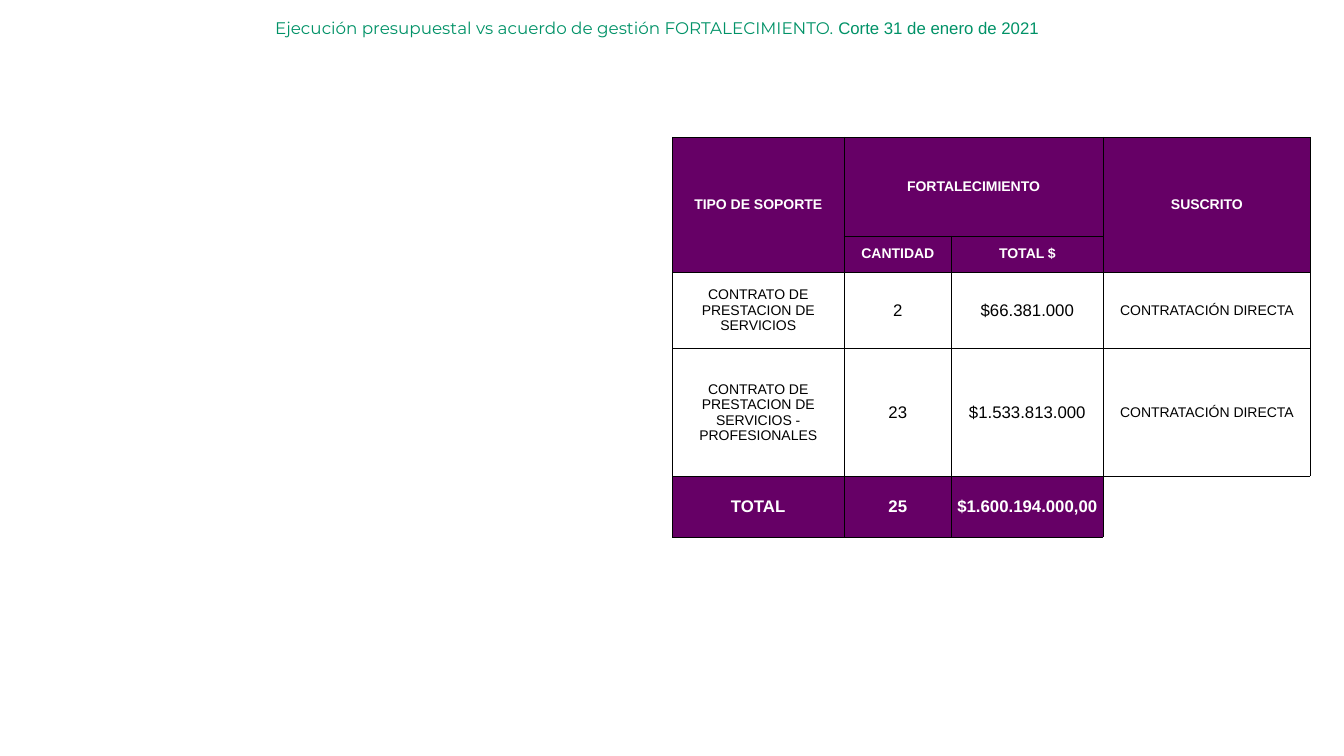
from dataclasses import dataclass

from lxml.etree import SubElement
from pptx import Presentation
from pptx.dml.color import RGBColor
from pptx.enum.text import MSO_ANCHOR, MSO_AUTO_SIZE, PP_ALIGN
from pptx.oxml.ns import qn
from pptx.util import Inches, Pt


@dataclass(frozen=True)
class Theme:
    """Colours, fonts and type sizes of the slide."""
    green: str = "009267"
    purple: str = "660066"
    white: str = "FFFFFF"
    black: str = "000000"
    title_font: str = "Montserrat"
    body_font: str = "Arial"
    large: int = 12
    small: int = 10
    border: float = 0.5


COLUMN_WIDTHS = [1.7, 1.07, 1.5, 2.06]
ROW_HEIGHTS = [0.98, 0.36, 0.76, 1.27, 0.6]
HEADER_ROWS = 2
TOTAL_ROW = 4
AMOUNT_COLUMNS = (1, 2)
MERGES = [((0, 0), (1, 0)), ((0, 1), (0, 2)), ((0, 3), (1, 3))]
CONTRACTS = [
    ["TIPO DE SOPORTE", "FORTALECIMIENTO", "", "SUSCRITO"],
    ["", "CANTIDAD", "TOTAL $", ""],
    ["CONTRATO DE PRESTACION DE SERVICIOS", "2", "$66.381.000", "CONTRATACIÓN DIRECTA"],
    ["CONTRATO DE PRESTACION DE SERVICIOS - PROFESIONALES", "23", "$1.533.813.000",
     "CONTRATACIÓN DIRECTA"],
    ["TOTAL", "25", "$1.600.194.000,00", ""],
]


class SlideBuilder:
    """Draws styled elements on one slide."""

    def __init__(self, slide, theme):
        """Keep the slide and its theme."""
        self.slide = slide
        self.theme = theme

    def style_font(self, font, name, size, color, bold=False):
        """Set the look of a font."""
        font.name = name
        font.size = Pt(size)
        font.bold = bold
        font.color.rgb = RGBColor.from_string(color)

    def add_title(self, left, top, width, height, parts):
        """Add a one-line title made of (text, font name) parts."""
        box = self.slide.shapes.add_textbox(
            Inches(left), Inches(top), Inches(width), Inches(height))
        frame = box.text_frame
        frame.word_wrap = True
        frame.auto_size = MSO_AUTO_SIZE.SHAPE_TO_FIT_TEXT
        for text, font_name in parts:
            run = frame.paragraphs[0].add_run()
            run.text = text
            self.style_font(run.font, font_name, self.theme.large, self.theme.green)

    def add_borders(self, cell, sides):
        """Draw thin lines on the given sides of a cell."""
        properties = cell._tc.get_or_add_tcPr()
        for side in sides:
            line = SubElement(properties, qn(f"a:ln{side}"), w=str(Pt(self.theme.border)))
            fill = SubElement(line, qn("a:solidFill"))
            SubElement(fill, qn("a:srgbClr"), val=self.theme.black)

    def style_cell(self, cell, text, row, column):
        """Fill in one cell according to its place in the table."""
        theme = self.theme
        header = row < HEADER_ROWS
        outside = row == TOTAL_ROW and not text
        strong = header or (row == TOTAL_ROW and not outside)
        large = row == TOTAL_ROW or (not header and column in AMOUNT_COLUMNS)
        cell.margin_left = cell.margin_right = cell.margin_top = cell.margin_bottom = 0
        cell.vertical_anchor = MSO_ANCHOR.MIDDLE
        self.add_borders(cell, "LT" if outside else "LRTB")
        if strong:
            cell.fill.solid()
            cell.fill.fore_color.rgb = RGBColor.from_string(theme.purple)
        else:
            cell.fill.background()
        paragraph = cell.text_frame.paragraphs[0]
        paragraph.text = text
        paragraph.alignment = PP_ALIGN.CENTER
        for run in paragraph.runs:
            self.style_font(run.font, theme.body_font, theme.large if large else theme.small,
                            theme.white if strong else theme.black, strong)

    def add_contract_table(self, left, top):
        """Add the table of contracts with its merged headings."""
        shape = self.slide.shapes.add_table(
            len(ROW_HEIGHTS), len(COLUMN_WIDTHS), Inches(left), Inches(top),
            Inches(sum(COLUMN_WIDTHS)), Inches(sum(ROW_HEIGHTS)))
        table = shape.table
        table.first_row = table.horz_banding = False
        for column, width in zip(table.columns, COLUMN_WIDTHS):
            column.width = Inches(width)
        for row, height in zip(table.rows, ROW_HEIGHTS):
            row.height = Inches(height)
        for row, texts in enumerate(CONTRACTS):
            for column, text in enumerate(texts):
                self.style_cell(table.cell(row, column), text, row, column)
        for first, last in MERGES:
            table.cell(*first).merge(table.cell(*last))


def main():
    """Build and save the budget slide."""
    presentation = Presentation()
    presentation.slide_width = Inches(13.33)
    presentation.slide_height = Inches(7.5)
    slide = presentation.slides.add_slide(presentation.slide_layouts[6])
    theme = Theme()
    builder = SlideBuilder(slide, theme)
    builder.add_title(2.63, 0.13, 10.7, 0.3, [
        ("Ejecución presupuestal vs acuerdo de gestión FORTALECIMIENTO. ", theme.title_font),
        ("Corte 31 de enero de 2021", theme.body_font),
    ])
    builder.add_contract_table(6.67, 1.36)
    presentation.save("out.pptx")


if __name__ == "__main__":
    main()
